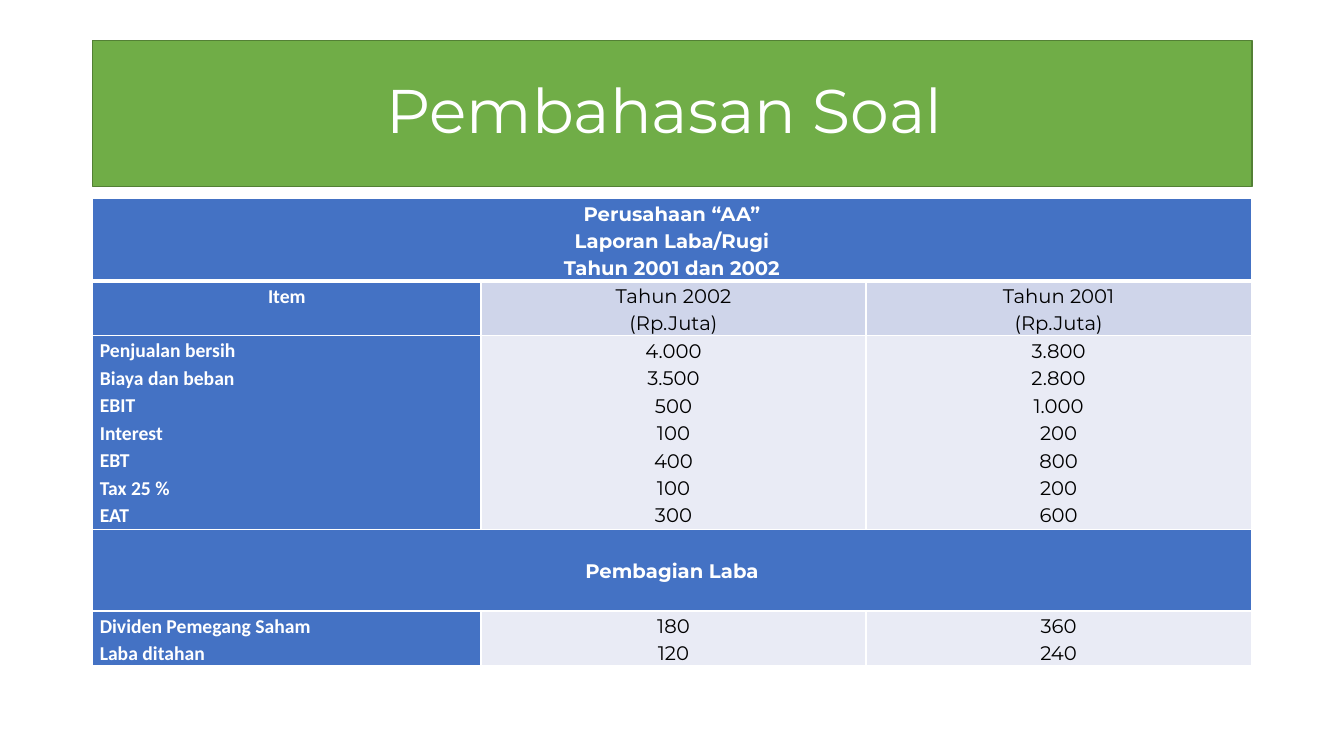
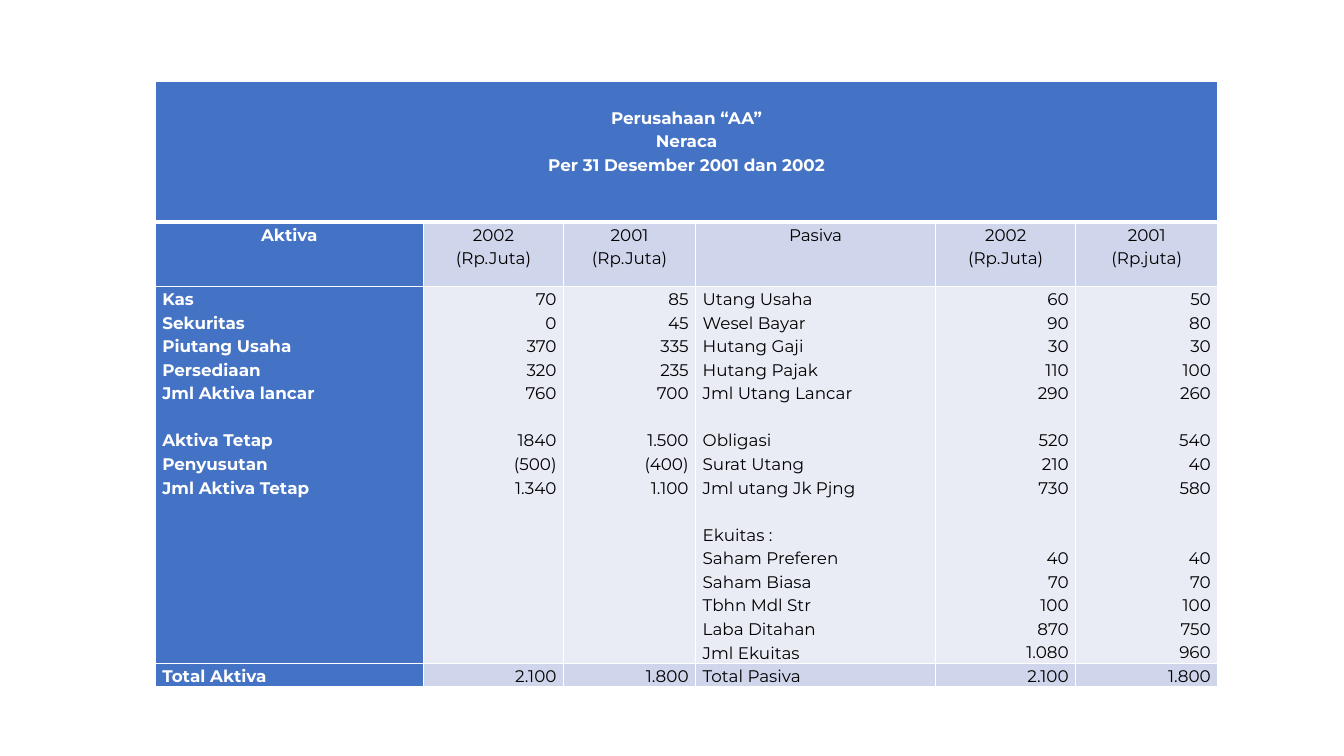
import pptx
import pptx.dml.color
import pptx.enum.shapes
import pptx.enum.text
import pptx.oxml
import pptx.oxml.ns
import pptx.util
from pptx.util import Inches

COLORS = {
    "white": "FFFFFF", "black": "000000", "title": "70AD47", "title_edge": "538035",
    "heading": "4472C4", "band_dark": "CFD5EA", "band_light": "E9EBF5",
}
FONT = "Montserrat"
ALIGN = pptx.enum.text.PP_ALIGN
ANCHOR = pptx.enum.text.MSO_ANCHOR
LINE_PITCH = 1.4

INCOME_ROWS = [
    dict(height=0.81, texts=["Perusahaan “AA”\nLaporan Laba/Rugi\nTahun 2001 dan 2002"]),
    dict(height=0.54, band="band_dark", aligns=[ALIGN.CENTER] * 3,
         texts=["Item", "Tahun 2002\n(Rp.Juta)", "Tahun 2001\n(Rp.Juta)"]),
    dict(height=1.92, band="band_light", aligns=[ALIGN.JUSTIFY, ALIGN.CENTER, ALIGN.CENTER],
         texts=["Penjualan bersih\nBiaya dan beban\nEBIT\nInterest\nEBT\nTax 25 %\nEAT",
                "4.000\n3.500\n500\n100\n400\n100\n300",
                "3.800\n2.800\n1.000\n200\n800\n200\n600"]),
    dict(height=0.81, texts=["Pembagian Laba"], anchor=ANCHOR.MIDDLE),
    dict(height=0.54, band="band_light", aligns=[ALIGN.JUSTIFY, ALIGN.CENTER, ALIGN.CENTER],
         texts=["Dividen Pemegang Saham\nLaba ditahan", "180\n120", "360\n240"]),
]

BALANCE_ALIGNS = [ALIGN.JUSTIFY, ALIGN.RIGHT, ALIGN.RIGHT] * 2
BALANCE_ROWS = [
    dict(height=1.39, texts=["Perusahaan “AA”\nNeraca\nPer 31 Desember 2001 dan 2002"],
         margin_top=0.23),
    dict(height=0.64, band="band_dark", aligns=[ALIGN.CENTER] * 6,
         texts=["Aktiva", "2002\n(Rp.Juta)", "2001\n(Rp.Juta)",
                "Pasiva", "2002\n(Rp.Juta)", "2001\n(Rp.juta)"]),
    dict(height=3.74, band="band_light", aligns=BALANCE_ALIGNS,
         texts=["Kas\nSekuritas\nPiutang Usaha\nPersediaan\nJml Aktiva lancar\n\n"
                "Aktiva Tetap\nPenyusutan\nJml Aktiva Tetap",
                "70\n0\n370\n320\n760\n\n1840\n(500)\n1.340",
                "85\n45\n335\n235\n700\n\n1.500\n(400)\n1.100",
                "Utang Usaha\nWesel Bayar\nHutang Gaji\nHutang Pajak\nJml Utang Lancar\n\n"
                "Obligasi\nSurat Utang\nJml utang Jk Pjng\n\nEkuitas :\nSaham Preferen\n"
                "Saham Biasa\nTbhn Mdl Str\nLaba Ditahan\nJml Ekuitas",
                "60\n90\n30\n110\n290\n\n520\n210\n730\n\n\n40\n70\n100\n870\n1.080",
                "50\n80\n30\n100\n260\n\n540\n40\n580\n\n\n40\n70\n100\n750\n960"]),
    dict(height=0.23, band="band_dark", aligns=BALANCE_ALIGNS,
         texts=["Total Aktiva", "2.100", "1.800", "Total Pasiva", "2.100", "1.800"]),
]


def rgb(name):
    """Return the named colour."""
    return pptx.dml.color.RGBColor.from_string(COLORS[name])


def write_text(frame, text, size, color, bold=False, font=FONT, align=ALIGN.CENTER, spacing=1.15):
    """Write one paragraph per line, turning each empty line into space before the next."""
    paragraph, gaps = None, 0
    for line in text.split("\n"):
        if not line:
            gaps += 1
            continue
        paragraph = frame.add_paragraph() if paragraph else frame.paragraphs[0]
        paragraph.alignment = align
        paragraph.line_spacing = spacing
        paragraph.space_before = pptx.util.Pt(gaps * size * LINE_PITCH)
        run = paragraph.add_run()
        run.text = line
        run.font.size = pptx.util.Pt(size)
        run.font.name = font
        run.font.bold = bold
        run.font.color.rgb = rgb(color)
        gaps = 0


def set_borders(cell, **widths):
    """Draw white borders around a cell, 1 pt unless a side is given a width."""
    properties = cell._tc.get_or_add_tcPr()
    for index, side in enumerate(("lnL", "lnR", "lnT", "lnB")):
        width = pptx.util.Pt(widths.get(side, 1))
        properties.insert(index, pptx.oxml.parse_xml(
            f'<a:{side} {pptx.oxml.ns.nsdecls("a")} w="{width}"><a:solidFill>'
            f'<a:srgbClr val="{COLORS["white"]}"/></a:solidFill></a:{side}>'))


def style_cell(cell, fill, anchor=ANCHOR.TOP, margin_top=0):
    """Set the fill, anchor and margins of a cell."""
    cell.fill.solid()
    cell.fill.fore_color.rgb = rgb(fill)
    cell.vertical_anchor = anchor
    cell.margin_left = cell.margin_right = Inches(0.07)
    cell.margin_top = Inches(margin_top)
    cell.margin_bottom = 0


def add_title(slide, text, box):
    """Add the green title band."""
    band = slide.shapes.add_shape(pptx.enum.shapes.MSO_SHAPE.RECTANGLE, *map(Inches, box))
    band.shadow.inherit = False
    band.fill.solid()
    band.fill.fore_color.rgb = rgb("title")
    band.line.color.rgb = rgb("title_edge")
    band.line.width = pptx.util.Pt(1)
    band.text_frame.word_wrap = True
    band.text_frame.vertical_anchor = ANCHOR.MIDDLE
    write_text(band.text_frame, text, 44, "white", spacing=0.9)


def add_statement(slide, left, top, widths, rows, size, label_font=FONT):
    """Add a financial statement whose single-text rows span all columns."""
    height = sum(row["height"] for row in rows)
    statement = slide.shapes.add_table(
        len(rows), len(widths), *map(Inches, (left, top, sum(widths), height))).table
    statement.horz_banding = False
    for column, width in zip(statement.columns, widths):
        column.width = Inches(width)
    for r, row in enumerate(rows):
        statement.rows[r].height = Inches(row["height"])
        spans = len(row["texts"]) == 1
        edges = {0: {"lnB": 3}, 1: {"lnT": 3}}.get(r, {})
        for c in range(len(widths)):
            cell = statement.cell(r, c)
            is_label = spans or c == 0
            style_cell(cell, "heading" if is_label else row["band"],
                       row.get("anchor", ANCHOR.TOP), row.get("margin_top", 0))
            set_borders(cell, **edges)
            if c < len(row["texts"]):
                write_text(cell.text_frame, row["texts"][c], size,
                           "white" if is_label else "black", bold=is_label,
                           font=label_font if is_label and not spans else FONT,
                           align=ALIGN.CENTER if spans else row["aligns"][c])
        if spans:
            statement.cell(r, 0).merge(statement.cell(r, len(widths) - 1))


def build_income_slide(slide):
    """Build the titled income statement slide."""
    add_title(slide, "Pembahasan Soal ", (0.92, 0.4, 11.5, 1.45))
    add_statement(slide, 0.92, 1.97, [3.85, 3.82, 3.82], INCOME_ROWS, 14, "Calibri")


def build_balance_slide(slide):
    """Build the balance sheet slide."""
    add_statement(slide, 1.54, 0.81, [2.66, 1.39, 1.31, 2.38, 1.39, 1.41], BALANCE_ROWS, 12)


def main():
    """Build and save the presentation."""
    deck = pptx.Presentation()
    deck.slide_width, deck.slide_height = Inches(13.33), Inches(7.5)
    for build in (build_income_slide, build_balance_slide):
        build(deck.slides.add_slide(deck.slide_layouts[6]))
    deck.save("out.pptx")


if __name__ == "__main__":
    main()
